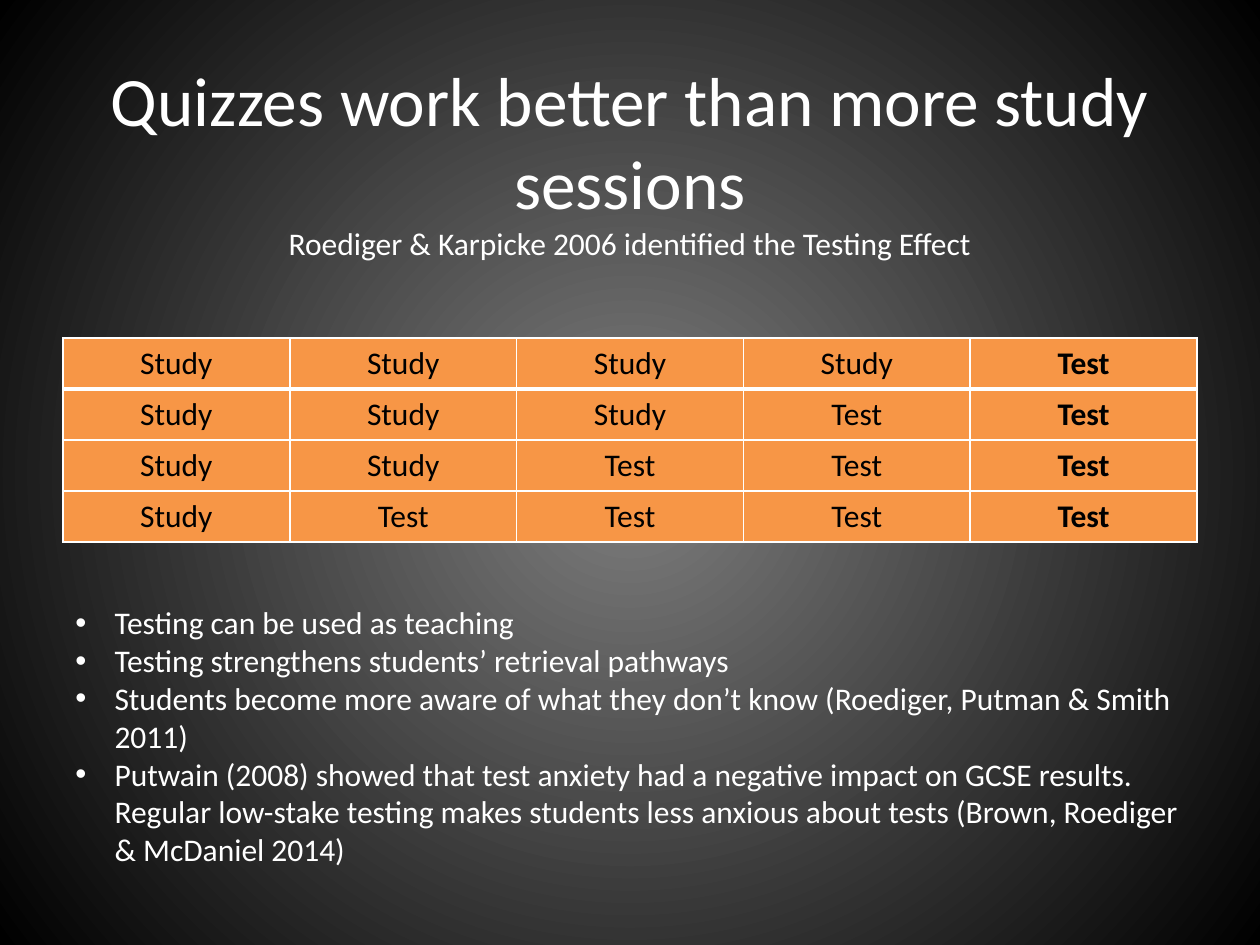
from lxml import etree
from pptx import Presentation
from pptx.dml.color import RGBColor
from pptx.enum.text import MSO_ANCHOR as ANCHOR, PP_ALIGN as ALIGN
from pptx.oxml import parse_xml
from pptx.oxml.ns import nsdecls, qn
from pptx.util import Cm, Pt

COLORS = {
    "text": "FFFFFF",
    "cell": "F79646",
    "cell_text": "000000",
    "border": "FFFFFF",
    "center": "7F7F7F",
    "edge": "000000",
}
FONT = "Calibri"
LEFT, WIDTH = 1.27, 22.86
ROUNDS, ROWS = 5, 4
ROW_HEIGHT = 1.03
BULLETS = [
    "Testing can be used as teaching",
    "Testing strengthens students’ retrieval pathways",
    "Students become more aware of what they don’t know (Roediger, Putman & Smith 2011)",
    "Putwain (2008) showed that test anxiety had a negative impact on GCSE results. "
    "Regular low-stake testing makes students less anxious about tests "
    "(Brown, Roediger & McDaniel 2014)",
]


def add_text(p, text, size=18, color="text", bold=False, align=ALIGN.LEFT):
    p.alignment = align
    r = p.add_run()
    r.text = text
    r.font.name = FONT
    r.font.size = Pt(size)
    r.font.bold = bold
    r.font.color.rgb = RGBColor.from_string(COLORS[color])


def add_box(slide, top, height):
    sp = slide.shapes.add_textbox(Cm(LEFT), Cm(top), Cm(WIDTH), Cm(height))
    tf = sp.text_frame
    tf.word_wrap = True
    return tf


def set_background(slide):
    bg = parse_xml(
        f'<p:bg {nsdecls("p", "a")}><p:bgPr><a:gradFill rotWithShape="1"><a:gsLst>'
        f'<a:gs pos="0"><a:srgbClr val="{COLORS["center"]}"/></a:gs>'
        f'<a:gs pos="100000"><a:srgbClr val="{COLORS["edge"]}"/></a:gs></a:gsLst>'
        '<a:path path="circle"><a:fillToRect l="50000" t="50000" r="50000" b="50000"/>'
        '</a:path></a:gradFill><a:effectLst/></p:bgPr></p:bg>'
    )
    slide.element.cSld.insert(0, bg)


def add_title(slide):
    tf = add_box(slide, 0.76, 6.45)
    tf.vertical_anchor = ANCHOR.MIDDLE
    tf.margin_bottom = Cm(1.67)
    p = tf.paragraphs[0]
    add_text(p, "Quizzes work better than more study sessions", size=39.6, align=ALIGN.CENTER)
    p.add_line_break()
    add_text(p, "Roediger & Karpicke 2006 identified the Testing Effect", align=ALIGN.CENTER)


def set_borders(cell, **widths):
    tc_pr = cell._tc.get_or_add_tcPr()
    for side, width in widths.items():
        ln = etree.SubElement(tc_pr, qn(f"a:ln{side}"), w=str(Pt(width)))
        fill = etree.SubElement(ln, qn("a:solidFill"))
        etree.SubElement(fill, qn("a:srgbClr"), val=COLORS["border"])


def add_schedule(slide):
    table = slide.shapes.add_table(
        ROWS, ROUNDS, Cm(LEFT), Cm(6.81), Cm(WIDTH), Cm(ROWS * ROW_HEIGHT)
    ).table
    for i, row in enumerate(table.rows):
        row.height = Cm(ROW_HEIGHT)
        for j, cell in enumerate(row.cells):
            set_borders(cell, L=1, R=1, T=3 if i == 1 else 1, B=3 if i == 0 else 1)
            cell.fill.solid()
            cell.fill.fore_color.rgb = RGBColor.from_string(COLORS["cell"])
            add_text(
                cell.text_frame.paragraphs[0],
                "Study" if i + j < ROUNDS - 1 else "Test",
                color="cell_text",
                bold=j == ROUNDS - 1,
                align=ALIGN.CENTER,
            )


def add_bullets(slide):
    tf = add_box(slide, 12.04, 5.64)
    for i, text in enumerate(BULLETS):
        p = tf.add_paragraph() if i else tf.paragraphs[0]
        add_text(p, text)
        p_pr = p._p.get_or_add_pPr()
        p_pr.set("marL", str(Cm(0.79)))
        p_pr.set("indent", str(-Cm(0.79)))
        etree.SubElement(p_pr, qn("a:buFont"), typeface="Arial")
        etree.SubElement(p_pr, qn("a:buChar"), char="•")


def main():
    prs = Presentation()
    prs.slide_width, prs.slide_height = Cm(25.4), Cm(19.05)
    slide = prs.slides.add_slide(prs.slide_layouts[6])
    set_background(slide)
    add_title(slide)
    add_schedule(slide)
    add_bullets(slide)
    prs.save("out.pptx")


if __name__ == "__main__":
    main()
